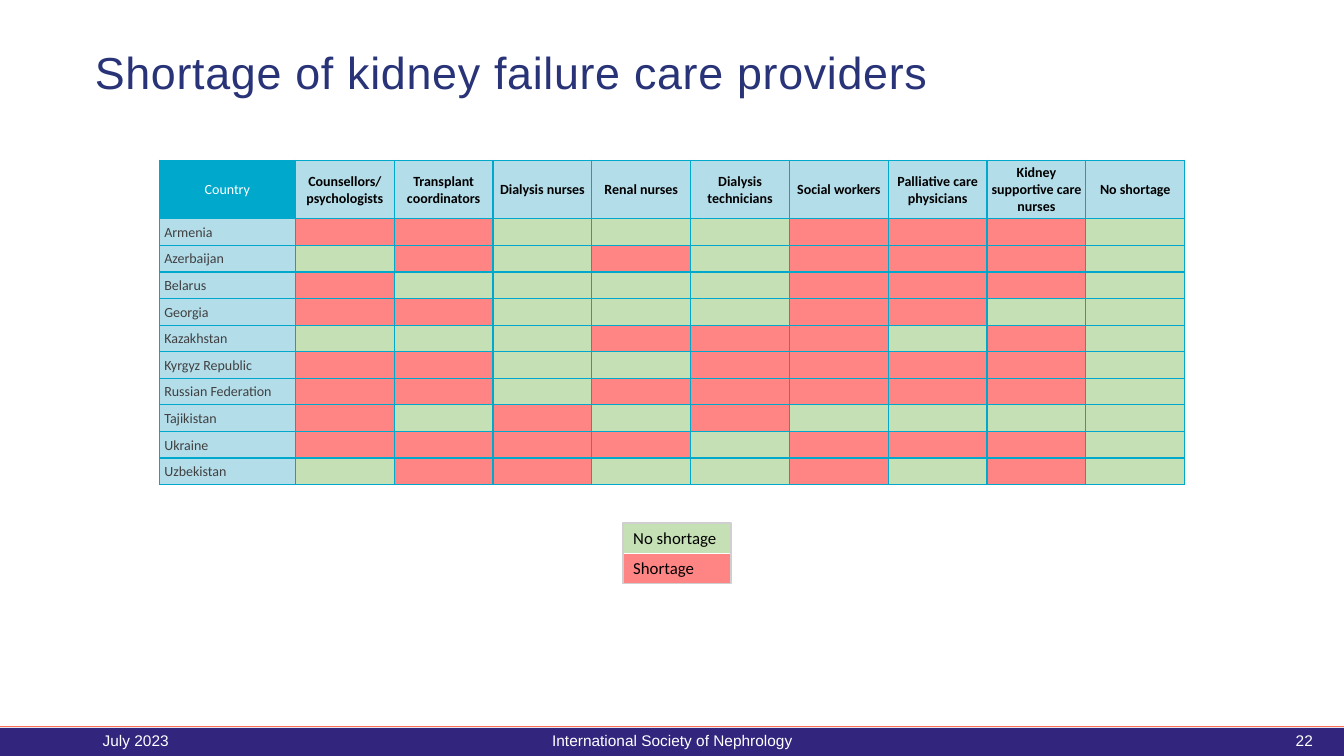
from lxml import etree
from pptx import Presentation
from pptx.dml.color import RGBColor
from pptx.enum.shapes import MSO_CONNECTOR, MSO_SHAPE
from pptx.enum.text import MSO_ANCHOR, MSO_AUTO_SIZE, PP_ALIGN
from pptx.oxml.ns import qn
from pptx.util import Inches, Pt

LEFT, CENTER, RIGHT = PP_ALIGN.LEFT, PP_ALIGN.CENTER, PP_ALIGN.RIGHT
MIDDLE, TOP = MSO_ANCHOR.MIDDLE, MSO_ANCHOR.TOP
RECTANGLE, STRAIGHT = MSO_SHAPE.RECTANGLE, MSO_CONNECTOR.STRAIGHT
NO_AUTOFIT = MSO_AUTO_SIZE.NONE

WHITE = RGBColor(0xFF, 0xFF, 0xFF)
BLACK = RGBColor(0x00, 0x00, 0x00)
GRAY = RGBColor(0x40, 0x40, 0x40)
LIGHT_GRAY = RGBColor(0xD0, 0xCE, 0xCE)
NAVY = RGBColor(0x28, 0x33, 0x78)
INDIGO = RGBColor(0x32, 0x25, 0x7E)
CORAL = RGBColor(0xFE, 0x70, 0x55)
CYAN = RGBColor(0x00, 0xA8, 0xCB)
PALE_BLUE = RGBColor(0xB4, 0xDD, 0xEA)
GREEN = RGBColor(0xC5, 0xE0, 0xB4)
RED = RGBColor(0xFF, 0x85, 0x85)

PROVIDERS = [
    "Counsellors/ psychologists", "Transplant coordinators", "Dialysis nurses",
    "Renal nurses", "Dialysis technicians", "Social workers",
    "Palliative care physicians", "Kidney supportive care nurses", "No shortage",
]
SHORTAGES = {
    "Armenia": "110001110",
    "Azerbaijan": "010101110",
    "Belarus": "100001110",
    "Georgia": "110001100",
    "Kazakhstan": "000111010",
    "Kyrgyz Republic": "110011110",
    "Russian Federation": "110111110",
    "Tajikistan": "101010000",
    "Ukraine": "111101110",
    "Uzbekistan": "011001010",
}


def set_text(p, text, font, size, color, align=LEFT, bold=False):
    p.text = text
    p.alignment = align
    p.font.name = font
    p.font.size = Pt(size)
    p.font.bold = bold
    p.font.color.rgb = color


def set_cell(cell, fill, border, margins=(0, 0, 0, 0), anchor=MIDDLE):
    cell.margin_left, cell.margin_top, cell.margin_right, cell.margin_bottom = (
        Inches(m) for m in margins)
    cell.vertical_anchor = anchor
    tcPr = cell._tc.get_or_add_tcPr()
    for side in ("a:lnL", "a:lnR", "a:lnT", "a:lnB"):
        ln = etree.SubElement(tcPr, qn(side), w=str(Pt(1)))
        solid = etree.SubElement(ln, qn("a:solidFill"))
        etree.SubElement(solid, qn("a:srgbClr"), val=str(border))
    cell.fill.solid()
    cell.fill.fore_color.rgb = fill
    return cell.text_frame.paragraphs[0]


def add_grid(s, left, top, col_widths, row_heights):
    table = s.shapes.add_table(
        len(row_heights), len(col_widths), Inches(left), Inches(top),
        Inches(sum(col_widths)), Inches(sum(row_heights))).table
    table.first_row = table.horz_banding = False
    for col, width in zip(table.columns, col_widths):
        col.width = Inches(width)
    for row, height in zip(table.rows, row_heights):
        row.height = Inches(height)
    return table


def add_title(s, text, left, top, width, height):
    sp = s.shapes.title
    sp.left, sp.top, sp.width, sp.height = (
        Inches(v) for v in (left, top, width, height))
    tf = sp.text_frame
    tf.auto_size = NO_AUTOFIT
    tf.vertical_anchor = MIDDLE
    p = tf.paragraphs[0]
    set_text(p, text, "Arial", 32, NAVY)
    p.line_spacing = 0.9
    p.runs[0]._r.get_or_add_rPr().set("spc", "50")


def add_shortage_table(s, left, top, width, height):
    first_col, header = 1.35, 0.58
    col = (width - first_col) / len(PROVIDERS)
    row = (height - header) / len(SHORTAGES)
    table = add_grid(s, left, top, [first_col] + [col] * len(PROVIDERS),
                     [header] + [row] * len(SHORTAGES))
    label_margins, head_margins = (0.05, 0, 0.05, 0), (0.01, 0.01, 0.01, 0)

    p = set_cell(table.cell(0, 0), CYAN, CYAN, label_margins)
    set_text(p, "Country", "Calibri", 10, WHITE, CENTER)
    for c, provider in enumerate(PROVIDERS, 1):
        p = set_cell(table.cell(0, c), PALE_BLUE, CYAN, head_margins)
        set_text(p, provider, "Calibri", 10, BLACK, CENTER, True)

    for r, (country, flags) in enumerate(SHORTAGES.items(), 1):
        p = set_cell(table.cell(r, 0), PALE_BLUE, CYAN, label_margins)
        set_text(p, country, "Calibri", 10, GRAY)
        p.line_spacing = 1.07
        for c, flag in enumerate(flags, 1):
            p = set_cell(table.cell(r, c), RED if flag == "1" else GREEN, CYAN)
            etree.SubElement(p._p, qn("a:endParaRPr"), sz="1000")


def add_legend(s, left, top, width, height):
    entries = [("No shortage", GREEN), ("Shortage", RED)]
    table = add_grid(s, left, top, [width], [height / len(entries)] * len(entries))
    for r, (label, color) in enumerate(entries):
        p = set_cell(table.cell(r, 0), color, WHITE, (0.1, 0.05, 0.1, 0.05), TOP)
        set_text(p, label, "Calibri", 12, BLACK)
    frame = s.shapes.add_shape(
        RECTANGLE, Inches(left), Inches(top), Inches(width), Inches(height))
    frame.shadow.inherit = False
    frame.fill.background()
    frame.line.color.rgb = LIGHT_GRAY
    frame.line.width = Pt(1)


def add_footer(s, left, top, width, height):
    bar = s.shapes.add_shape(
        RECTANGLE, Inches(left), Inches(top), Inches(width), Inches(height))
    bar.shadow.inherit = False
    bar.fill.solid()
    bar.fill.fore_color.rgb = INDIGO
    bar.line.fill.background()

    rule_y = Inches(top - 0.01)
    rule = s.shapes.add_connector(
        STRAIGHT, Inches(left), rule_y, Inches(left + width), rule_y)
    rule.line.color.rgb = CORAL
    rule.line.width = Pt(0.75)
    etree.SubElement(rule._element.spPr, qn("a:effectLst"))

    for text, x, w, align in [
        ("July 2023", 0.92, 3, LEFT),
        ("International Society of Nephrology", 4.42, 4.5, CENTER),
        ("22", 9.42, 3.7, RIGHT),
    ]:
        tf = s.shapes.add_textbox(Inches(left + x), Inches(top - 0.07),
                                  Inches(w), Inches(0.4)).text_frame
        tf.word_wrap = True
        tf.vertical_anchor = MIDDLE
        set_text(tf.paragraphs[0], text, "Arial", 11, WHITE, align)


def main():
    prs = Presentation()
    prs.slide_width, prs.slide_height = Inches(13.33), Inches(7.5)
    s = prs.slides.add_slide(prs.slide_layouts[5])
    add_footer(s, 0, 7.22, 13.33, 0.28)
    add_shortage_table(s, 1.58, 1.59, 10.17, 3.22)
    add_legend(s, 6.18, 5.19, 1.07, 0.6)
    add_title(s, "Shortage of kidney failure care providers", 0.84, 0.39, 9.26, 0.71)
    prs.save("out.pptx")


if __name__ == "__main__":
    main()
